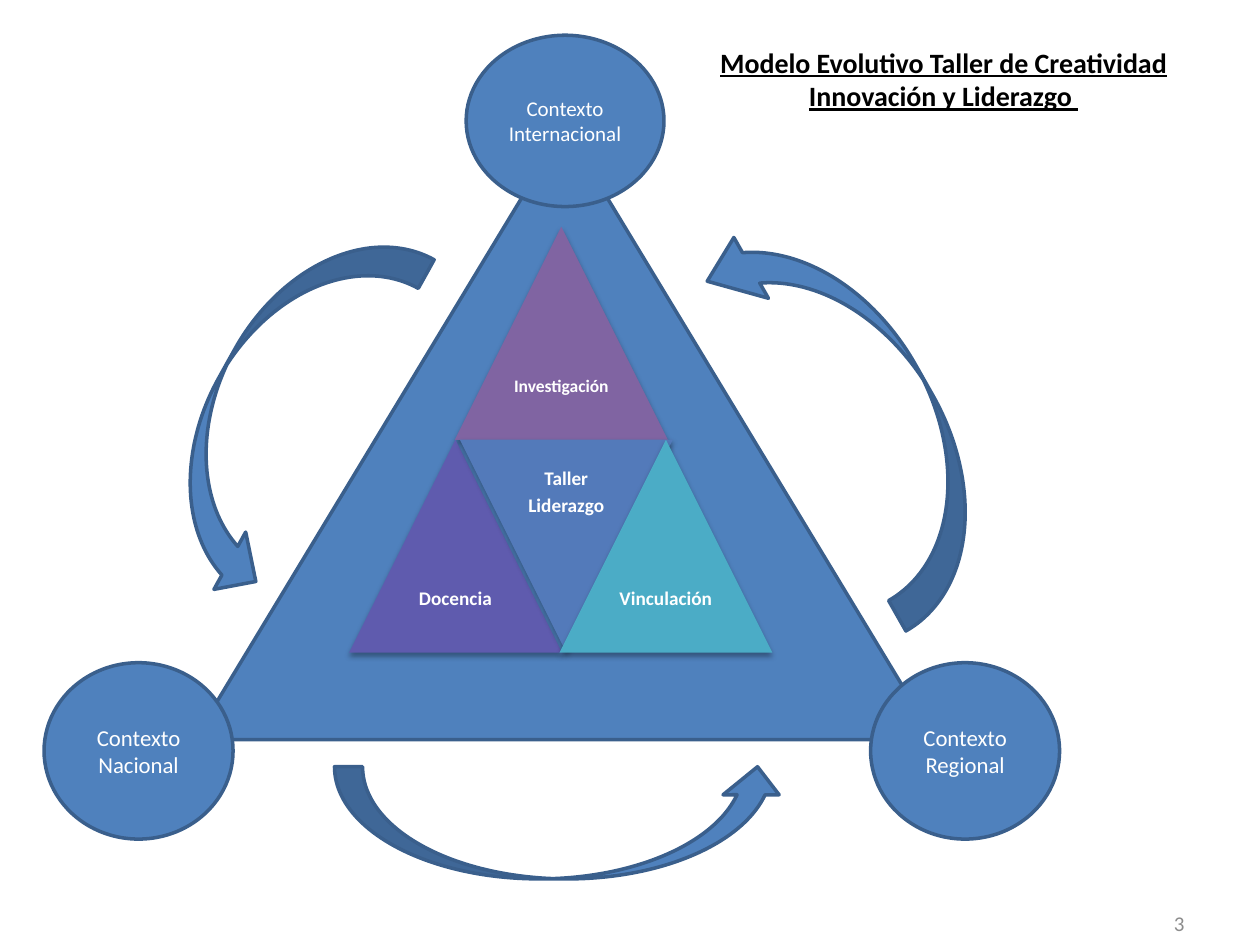
import pptx
import pptx.util
import pptx.dml.color
import pptx.enum.shapes
import pptx.enum.text
from dataclasses import dataclass
from lxml import etree
from pptx.util import Inches


@dataclass(frozen=True)
class Theme:
    font: str = "Calibri"
    black: str = "000000"
    white: str = "FFFFFF"
    grey: str = "8C8C8C"
    blue: str = "4F81BD"
    outline: str = "3A5F8C"
    purple: str = "8064A2"
    violet: str = "5F5BAE"
    steel: str = "537ABA"
    teal: str = "4BACC6"
    title_size: int = 16
    context_size: int = 13
    small_size: int = 12
    label_size: int = 11
    narrow_label_size: int = 10


def write(box, lines, size, color, bold=False, align="CENTER"):
    frame = box.text_frame
    frame.word_wrap = True
    frame.vertical_anchor = pptx.enum.text.MSO_ANCHOR.MIDDLE
    for index, line in enumerate(lines):
        para = frame.add_paragraph() if index else frame.paragraphs[0]
        para.alignment = pptx.enum.text.PP_ALIGN[align]
        span = para.add_run()
        span.text = line
        span.font.name = theme.font
        span.font.size = pptx.util.Pt(size)
        span.font.bold = bold
        span.font.color.rgb = pptx.dml.color.RGBColor.from_string(color)
    return frame.paragraphs


def draw(shapes, kind, place, fill, outline=None):
    shape = shapes.add_shape(kind, *[Inches(value) for value in place])
    shape.shadow.inherit = False
    shape.fill.solid()
    shape.fill.fore_color.rgb = pptx.dml.color.RGBColor.from_string(fill)
    if outline:
        shape.line.color.rgb = pptx.dml.color.RGBColor.from_string(outline)
        shape.line.width = pptx.util.Pt(2)
    else:
        shape.line.fill.background()
    return shape


theme = Theme()
kinds = pptx.enum.shapes.MSO_SHAPE
deck = pptx.Presentation()
deck.slide_width, deck.slide_height = Inches(10), Inches(7.5)
page = deck.slides.add_slide(deck.slide_layouts[5])

draw(page.shapes, kinds.ISOSCELES_TRIANGLE, (1.54, 1.01, 5.88, 4.86),
     theme.blue, theme.outline)

title = page.shapes.title
title.left, title.top = Inches(5.41), Inches(0.23)
title.width, title.height = Inches(4.16), Inches(0.79)
heading = write(title, ["Modelo Evolutivo Taller de Creatividad Innovación y Liderazgo "],
                theme.title_size, theme.black, bold=True)
heading[0].runs[0].font.underline = True

side = 1.69
half = side / 2
top_row, bottom_row = 1.8, 3.49
pyramid = page.shapes.add_group_shape()
for left, top, fill, lines, size, inverted in [
    (3.61, top_row, theme.purple, ["Investigación"], theme.narrow_label_size, False),
    (2.77, bottom_row, theme.violet, ["Docencia"], theme.label_size, False),
    (3.65, bottom_row, theme.steel, ["Taller", "Liderazgo"], theme.label_size, True),
    (4.44, bottom_row, theme.teal, ["Vinculación"], theme.label_size, False),
]:
    triangle = draw(pyramid.shapes, kinds.ISOSCELES_TRIANGLE, (left, top, side, side), fill)
    triangle.rotation = 180 if inverted else 0
    effects = triangle._element.spPr.find(pptx.oxml.ns.qn("a:effectLst"))
    shadow = etree.SubElement(effects, pptx.oxml.ns.qn("a:outerShdw"), blurRad="39370",
                              dist="22860", dir="5400000", rotWithShape="0")
    tone = etree.SubElement(shadow, pptx.oxml.ns.qn("a:srgbClr"), val=theme.black)
    etree.SubElement(tone, pptx.oxml.ns.qn("a:alpha"), val="35000")

    label_top = top if inverted else top + half
    label = pyramid.shapes.add_textbox(Inches(left + half / 2), Inches(label_top),
                                       Inches(half), Inches(half))
    frame = label.text_frame
    frame.margin_left = frame.margin_right = Inches(0.04)
    frame.margin_top = frame.margin_bottom = Inches(0.04)
    for para in write(label, lines, size, theme.white, bold=True):
        para.line_spacing = 0.9
        para.space_after = pptx.util.Pt(size * 0.35)

for place, name, size in [
    ((3.7, 0.28, 1.57, 1.36), "Contexto Internacional", theme.small_size),
    ((6.91, 5.26, 1.5, 1.4), "Contexto Regional", theme.context_size),
    ((0.35, 5.26, 1.5, 1.4), "Contexto Nacional", theme.context_size),
]:
    circle = draw(page.shapes, kinds.OVAL, place, theme.blue, theme.outline)
    write(circle, [name], size, theme.white)

for place, angle, head in [
    ((1.7, 1.61, 1.04, 3.18), 29, 0.25),
    ((6.26, 1.49, 1.11, 3.47), 150.4, 0.32),
    ((4, 4.74, 0.89, 3.58), 270, 0.25),
]:
    arrow = draw(page.shapes, kinds.CURVED_RIGHT_ARROW, place, theme.blue, theme.outline)
    arrow.rotation = angle
    for index, value in enumerate((0.25, 0.5, head)):
        arrow.adjustments[index] = value

number = page.shapes.add_textbox(Inches(7.17), Inches(7.13), Inches(2.33), Inches(0.4))
write(number, ["3"], theme.small_size, theme.grey, align="RIGHT")

deck.save("out.pptx")
